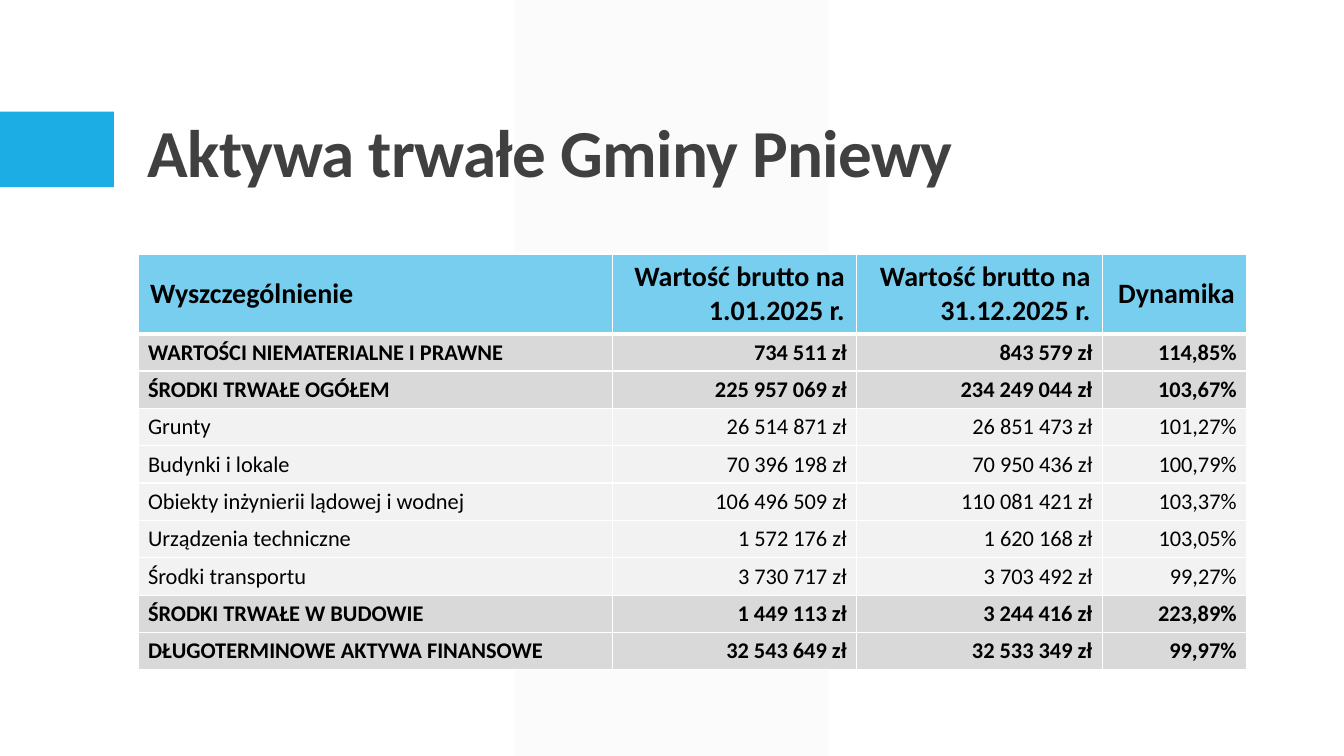
from pptx import Presentation
from pptx.util import Pt
from pptx.dml.color import RGBColor
from pptx.enum.shapes import MSO_SHAPE
from pptx.enum.text import MSO_ANCHOR, PP_ALIGN
from pptx.oxml.ns import qn
from lxml.etree import SubElement

TITLE = "Aktywa trwałe Gminy Pniewy"
HEADER = ("Wyszczególnienie", "Wartość brutto na 1.01.2025 r.",
          "Wartość brutto na 31.12.2025 r.", "Dynamika")
ASSETS = [
    ("WARTOŚCI NIEMATERIALNE I PRAWNE", "734 511 zł", "843 579 zł", "114,85%"),
    ("ŚRODKI TRWAŁE OGÓŁEM", "225 957 069 zł", "234 249 044 zł", "103,67%"),
    ("Grunty", "26 514 871 zł", "26 851 473 zł", "101,27%"),
    ("Budynki i lokale", "70 396 198 zł", "70 950 436 zł", "100,79%"),
    ("Obiekty inżynierii lądowej i wodnej", "106 496 509 zł", "110 081 421 zł", "103,37%"),
    ("Urządzenia techniczne", "1 572 176 zł", "1 620 168 zł", "103,05%"),
    ("Środki transportu", "3 730 717 zł", "3 703 492 zł", "99,27%"),
    ("ŚRODKI TRWAŁE W BUDOWIE", "1 449 113 zł", "3 244 416 zł", "223,89%"),
    ("DŁUGOTERMINOWE AKTYWA FINANSOWE", "32 543 649 zł", "32 533 349 zł", "99,97%"),
]
COL_WIDTHS = (339, 174.5, 175.5, 103)
HEADER_HEIGHT, ROW_HEIGHT = 57, 26.7
LEFT, WIDTH = 98.6, sum(COL_WIDTHS)


def rgb(value):
    return RGBColor.from_string(value)


def add_block(slide, preset, box, color):
    s = slide.shapes.add_shape(preset, *map(Pt, box))
    s.shadow.inherit = False
    s.fill.solid()
    s.fill.fore_color.rgb = rgb(color)
    s.line.fill.background()
    return s


def add_run(p, text, size, color, bold):
    r = p.add_run()
    r.text = text
    r.font.name = "Calibri"
    r.font.size = Pt(size)
    r.font.bold = bold
    r.font.color.rgb = rgb(color)
    return r


def set_borders(cell, bottom):
    tc_pr = cell._tc.get_or_add_tcPr()
    for side, width in (("L", 1), ("R", 1), ("T", 1), ("B", bottom)):
        ln = SubElement(tc_pr, qn("a:ln" + side), w=str(Pt(width)))
        SubElement(SubElement(ln, qn("a:solidFill")), qn("a:srgbClr"), val="FFFFFF")


def fill_cell(cell, text, is_header, is_total, is_label):
    set_borders(cell, 3 if is_header else 1)
    cell.fill.solid()
    cell.fill.fore_color.rgb = rgb("77CEEF" if is_header else "D9D9D9" if is_total else "F2F2F2")
    cell.margin_left = cell.margin_right = Pt(8.64 if is_header else 7.2)
    cell.margin_top = cell.margin_bottom = Pt(4.32 if is_header else 3.6)
    cell.vertical_anchor = MSO_ANCHOR.MIDDLE if is_header else MSO_ANCHOR.TOP
    p = cell.text_frame.paragraphs[0]
    p.alignment = PP_ALIGN.LEFT if is_label else PP_ALIGN.RIGHT
    add_run(p, text, 20 if is_header else 16, "000000", is_header or is_total)


def add_asset_table(slide):
    rows = [HEADER] + ASSETS
    height = HEADER_HEIGHT + ROW_HEIGHT * len(ASSETS)
    table = slide.shapes.add_table(len(rows), len(HEADER), Pt(LEFT), Pt(181.4),
                                   Pt(WIDTH), Pt(height)).table
    table.horz_banding = False
    for column, width in zip(table.columns, COL_WIDTHS):
        column.width = Pt(width)
    for i, row in enumerate(rows):
        table.rows[i].height = Pt(ROW_HEIGHT if i else HEADER_HEIGHT)
        for j, text in enumerate(row):
            fill_cell(table.cell(i, j), text, i == 0, row[0].isupper(), j == 0)


def main():
    prs = Presentation()
    prs.slide_width, prs.slide_height = Pt(960), Pt(540)
    slide = prs.slides.add_slide(prs.slide_layouts[6])

    band = add_block(slide, MSO_SHAPE.PARALLELOGRAM, (367.5, 0, 224.6, 540), "F2F2F2")
    band.adjustments[0] = 0
    band_color = band.fill._xPr.find(qn("a:solidFill"))[0]
    SubElement(band_color, qn("a:alpha"), val="30000")
    add_block(slide, MSO_SHAPE.RECTANGLE, (0, 79.7, 81.4, 54), "1CADE4")

    tf = slide.shapes.add_textbox(Pt(LEFT), Pt(70), Pt(WIDTH), Pt(71)).text_frame
    tf.word_wrap = True
    tf.vertical_anchor = MSO_ANCHOR.BOTTOM
    p = tf.paragraphs[0]
    p.line_spacing = 0.9
    r = add_run(p, TITLE, 48, "404040", True)
    r.font._element.set("spc", "-50")

    add_asset_table(slide)
    prs.save("out.pptx")


if __name__ == "__main__":
    main()
